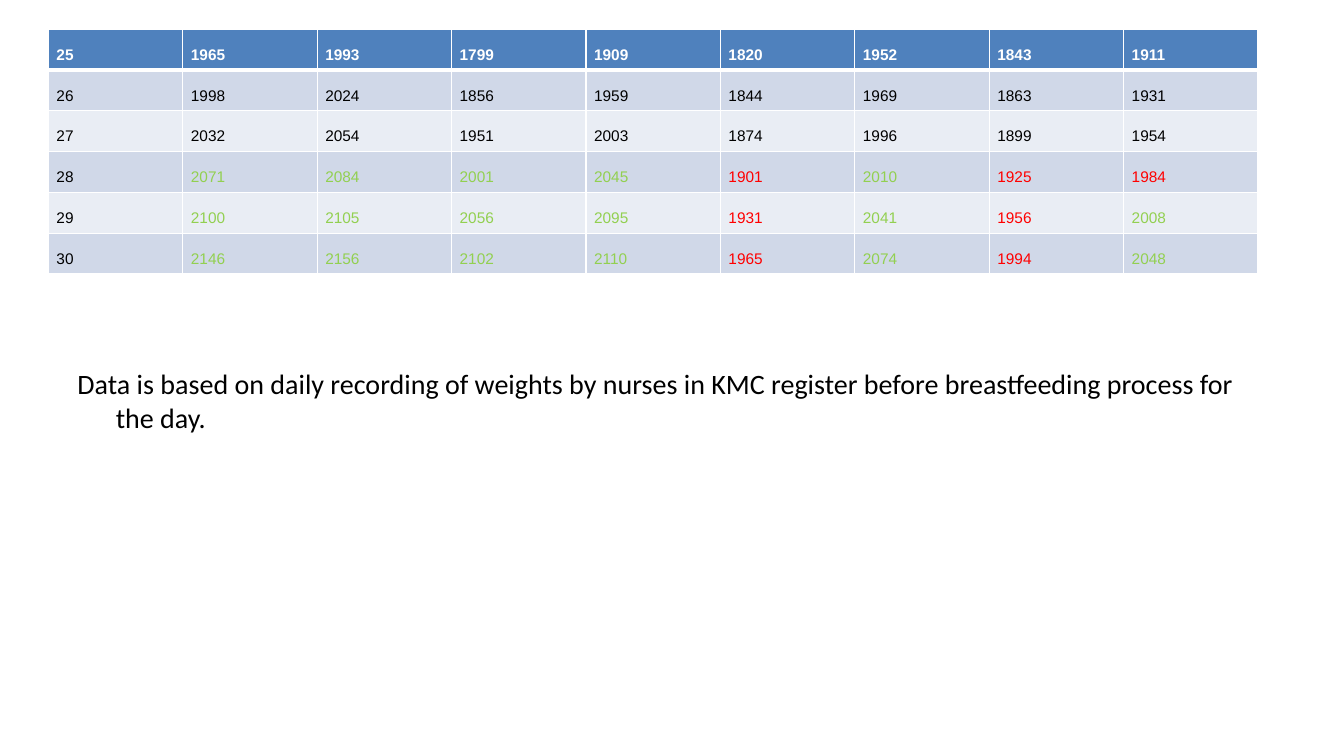
from dataclasses import dataclass

from lxml import etree
from pptx import Presentation
from pptx import util as u
from pptx.dml.color import RGBColor
from pptx.enum import text
from pptx.oxml import ns


@dataclass(frozen=True)
class Theme:
    header: str = "4F81BD"
    odd_band: str = "D0D8E8"
    even_band: str = "E9EDF4"
    white: str = "FFFFFF"
    black: str = "000000"
    reached: str = "92D050"
    below: str = "FF0000"
    table_font: str = "Arial"
    table_size: int = 11
    note_font: str = "Calibri"
    note_size: int = 20
    border: int = 1
    header_border: int = 3


@dataclass(frozen=True)
class DayRow:
    day: int
    weights: tuple[int, ...]


THEME = Theme()
TARGET_WEIGHT = 2000
FIRST_RATED_DAY = 28
ROWS = [
    DayRow(25, (1965, 1993, 1799, 1909, 1820, 1952, 1843, 1911)),
    DayRow(26, (1998, 2024, 1856, 1959, 1844, 1969, 1863, 1931)),
    DayRow(27, (2032, 2054, 1951, 2003, 1874, 1996, 1899, 1954)),
    DayRow(28, (2071, 2084, 2001, 2045, 1901, 2010, 1925, 1984)),
    DayRow(29, (2100, 2105, 2056, 2095, 1931, 2041, 1956, 2008)),
    DayRow(30, (2146, 2156, 2102, 2110, 1965, 2074, 1994, 2048)),
]
NOTE = ("Data is based on daily recording of weights by nurses in KMC register "
        "before breastfeeding process for the day.")


def style_text(para, font: str, size: int, color: str, bold: bool = False) -> None:
    for span in para.runs:
        span.font.name = font
        span.font.size = u.Pt(size)
        span.font.bold = bold
        span.font.color.rgb = RGBColor.from_string(color)


def set_borders(cell, top: int, bottom: int) -> None:
    props = cell._tc.get_or_add_tcPr()
    widths = {"a:lnL": THEME.border, "a:lnR": THEME.border, "a:lnT": top, "a:lnB": bottom}
    for tag, width in widths.items():
        line = etree.SubElement(props, ns.qn(tag), w=str(u.Pt(width)))
        fill = etree.SubElement(line, ns.qn("a:solidFill"))
        etree.SubElement(fill, ns.qn("a:srgbClr"), val=THEME.white)


def weight_color(row: DayRow, column: int) -> str:
    if row.day == ROWS[0].day:
        return THEME.white
    if column == 0 or row.day < FIRST_RATED_DAY:
        return THEME.black
    return THEME.reached if row.weights[column - 1] >= TARGET_WEIGHT else THEME.below


def fill_cell(cell, value: int, index: int, color: str) -> None:
    is_header = index == 0
    set_borders(cell,
                top=THEME.header_border if index == 1 else THEME.border,
                bottom=THEME.header_border if is_header else THEME.border)
    band = THEME.odd_band if index % 2 else THEME.even_band
    cell.fill.solid()
    cell.fill.fore_color.rgb = RGBColor.from_string(THEME.header if is_header else band)
    cell.margin_left = cell.margin_right = u.Inches(0.08)
    cell.margin_top = cell.margin_bottom = 0
    cell.text_frame.text = str(value)
    para = cell.text_frame.paragraphs[0]
    para.alignment = text.PP_ALIGN.JUSTIFY
    para.line_spacing = 2.0
    para.space_before = para.space_after = u.Pt(6)
    style_text(para, THEME.table_font, THEME.table_size, color, bold=is_header)


def add_weight_table(page) -> None:
    table = page.shapes.add_table(
        len(ROWS), len(ROWS[0].weights) + 1,
        u.Inches(0.48), u.Inches(0.29), u.Inches(12), u.Inches(2.43)).table
    for index, row in enumerate(ROWS):
        for column, value in enumerate((row.day, *row.weights)):
            fill_cell(table.cell(index, column), value, index, weight_color(row, column))


def add_note(page) -> None:
    box = page.shapes.add_textbox(u.Inches(0.67), u.Inches(1.75), u.Inches(12), u.Inches(4.95))
    frame = box.text_frame
    frame.word_wrap = True
    frame.margin_top = u.Inches(1.89)
    frame.text = NOTE
    para = frame.paragraphs[0]
    # Hanging indent
    props = para._p.get_or_add_pPr()
    props.set("marL", str(u.Inches(0.38)))
    props.set("indent", str(-u.Inches(0.38)))
    style_text(para, THEME.note_font, THEME.note_size, THEME.black)


def main() -> None:
    deck = Presentation()
    deck.slide_width, deck.slide_height = u.Inches(13.33), u.Inches(7.5)
    page = deck.slides.add_slide(deck.slide_layouts[6])
    # Note below the table
    add_note(page)
    # Daily weights
    add_weight_table(page)
    deck.save("out.pptx")


if __name__ == "__main__":
    main()
